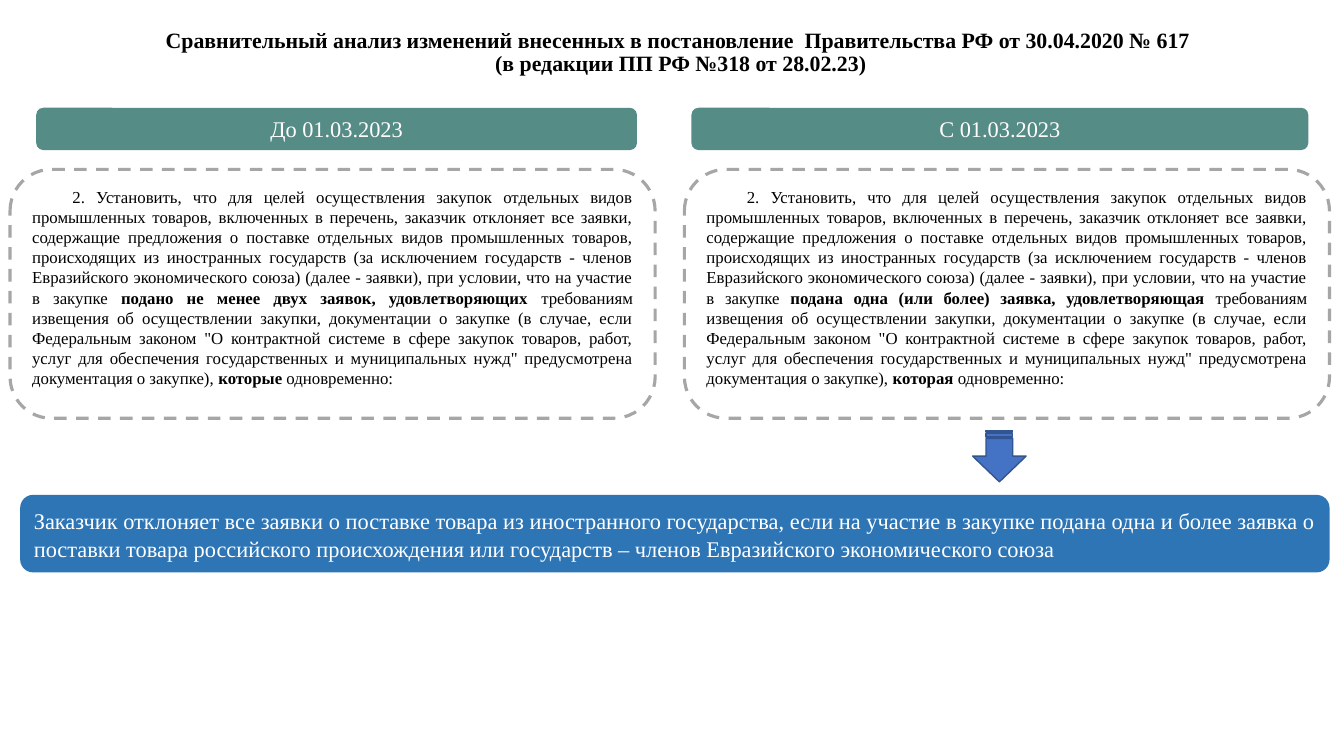
from pptx import Presentation
from pptx.dml.color import RGBColor
from pptx.enum import dml, shapes, text
from pptx.util import Pt

FONT = "Times New Roman"
KIND = shapes.MSO_SHAPE
ALIGN = text.PP_ALIGN
ANCHOR = text.MSO_ANCHOR
START = (
    "2. Установить, что для целей осуществления закупок отдельных видов промышленных товаров, "
    "включенных в перечень, заказчик отклоняет все заявки, содержащие предложения о поставке "
    "отдельных видов промышленных товаров, происходящих из иностранных государств (за исключением "
    "государств - членов Евразийского экономического союза) (далее - заявки), при условии, что на "
    "участие в закупке ")
MIDDLE = (
    "требованиям извещения об осуществлении закупки, документации о закупке (в случае, если "
    "Федеральным законом \"О контрактной системе в сфере закупок товаров, работ, услуг для "
    "обеспечения государственных и муниципальных нужд\" предусмотрена документация о закупке), ")
END = " одновременно:"
RESULT = (
    "Заказчик отклоняет все заявки о поставке товара из иностранного государства, если на участие "
    "в закупке подана одна и более заявка о поставки товара российского происхождения или "
    "государств – членов Евразийского экономического союза")
TITLE = (
    "Сравнительный анализ изменений внесенных в постановление  Правительства РФ от 30.04.2020 № 617 ",
    "(в редакции ПП РФ №318 от 28.02.23)")


def color(code):
    """Turn a hex string into a colour."""
    return RGBColor.from_string(code)


def write(shape, *paras, size=16, ink="FFFFFF", align=ALIGN.CENTER, anchor=ANCHOR.MIDDLE,
          space=1.0, indent=0):
    """Fill a shape with paragraphs, each a list of (words, bold) runs."""
    frame = shape.text_frame
    frame.word_wrap = True
    frame.auto_size = text.MSO_AUTO_SIZE.NONE
    frame.vertical_anchor = anchor
    for i, runs in enumerate(paras):
        para = frame.add_paragraph() if i else frame.paragraphs[0]
        para.alignment = align
        para.line_spacing = space
        para.space_before = Pt(0)
        if indent:
            para._p.get_or_add_pPr().set("indent", str(Pt(indent)))
        for words, bold in runs:
            run = para.add_run()
            run.text = words
            run.font.name = FONT
            run.font.size = Pt(size)
            run.font.bold = bold
            run.font.color.rgb = color(ink)


def block(slide, kind, box, fill=None, line=None, width=1):
    """Add a flat preset shape."""
    shape = slide.shapes.add_shape(kind, *map(Pt, box))
    shape.shadow.inherit = False
    if fill:
        shape.fill.solid()
        shape.fill.fore_color.rgb = color(fill)
    else:
        shape.fill.background()
    if line:
        shape.line.color.rgb = color(line)
        shape.line.width = Pt(width)
    else:
        shape.line.fill.background()
    return shape


def head(slide):
    """Place and format the title."""
    title = slide.shapes.title
    title.left, title.top, title.width, title.height = map(Pt, (30.2, -2.9, 912.2, 78.5))
    write(title, *([(row, True)] for row in TITLE), size=15.6, ink="000000",
          anchor=ANCHOR.BOTTOM, space=0.9)
    title.text_frame.margin_bottom = Pt(21)


def card(slide, left, change, which):
    """Add a dashed card with one wording of the rule."""
    shape = block(slide, KIND.ROUNDED_RECTANGLE, (left, 121, 460.8, 177.8),
                  line="A6A6A6", width=2.25)
    shape.line.dash_style = dml.MSO_LINE.DASH
    runs = [(START, False), (change, True), (MIDDLE, False), (which, True), (END, False)]
    write(shape, runs, size=12, ink="000000", align=ALIGN.JUSTIFY, anchor=ANCHOR.TOP, indent=28.8)


def label(slide, left, width, words):
    """Add a green column heading."""
    shape = block(slide, KIND.ROUNDED_RECTANGLE, (left, 77, width, 30.2), fill="568C86")
    write(shape, [(words, False)])


def main():
    """Build and save the slide."""
    deck = Presentation()
    deck.slide_width, deck.slide_height = Pt(960), Pt(540)
    slide = deck.slides.add_slide(deck.slide_layouts[5])
    head(slide)
    card(slide, 7.2, "подано не менее двух заявок, удовлетворяющих ", "которые")
    card(slide, 488.9, "подана одна (или более) заявка, удовлетворяющая ", "которая")
    label(slide, 25.9, 429.1, "До 01.03.2023")
    label(slide, 493.9, 440.6, "С 01.03.2023")
    result = block(slide, KIND.ROUNDED_RECTANGLE, (14.4, 353.5, 935.3, 55.4), fill="2E75B6")
    write(result, [(RESULT, False)], align=ALIGN.JUSTIFY, space=1.07)
    arrow = block(slide, KIND.STRIPED_RIGHT_ARROW, (695.5, 306.7, 36.7, 38.2),
                  fill="4472C4", line="325491")
    arrow.rotation = 90
    deck.save("out.pptx")


if __name__ == "__main__":
    main()
